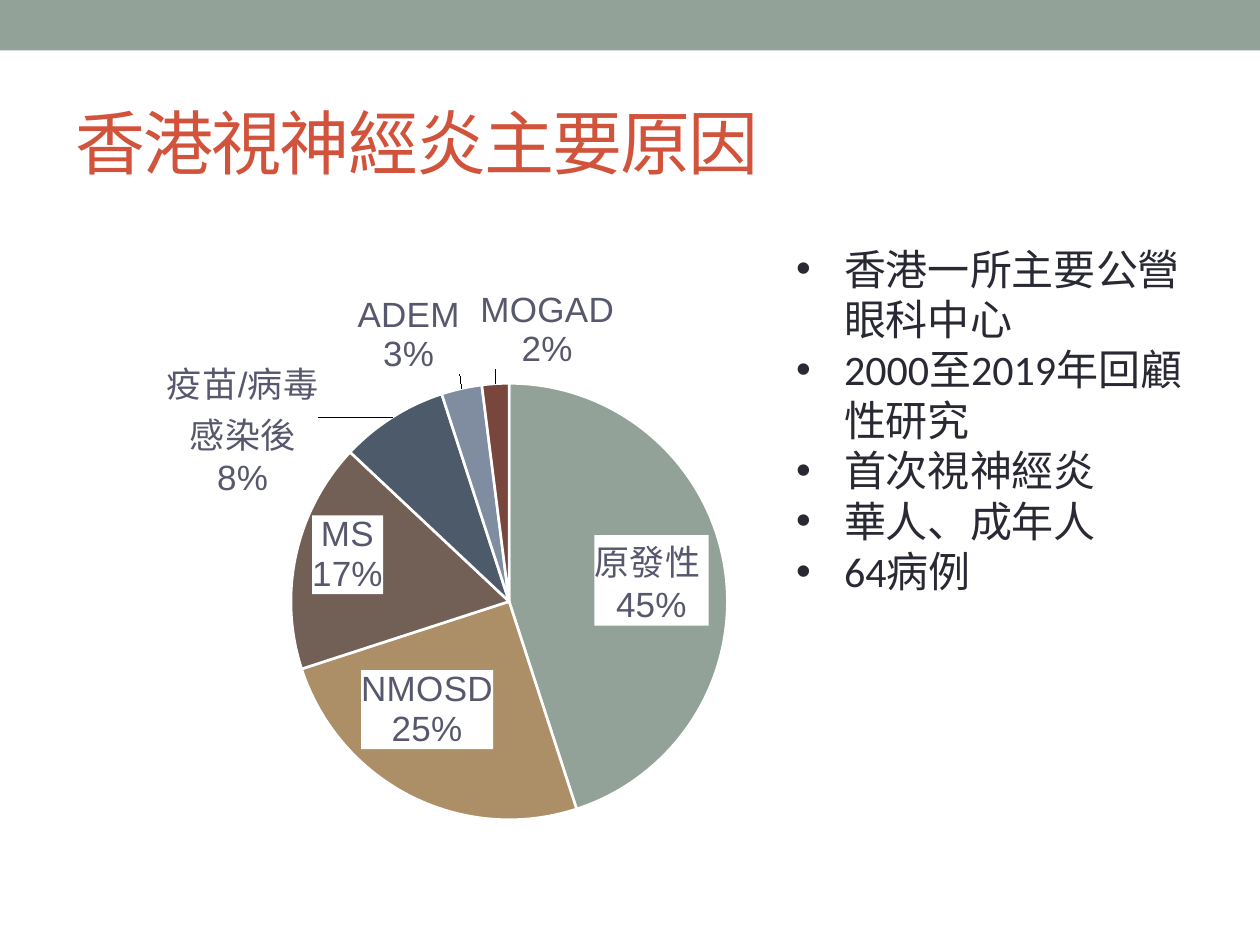
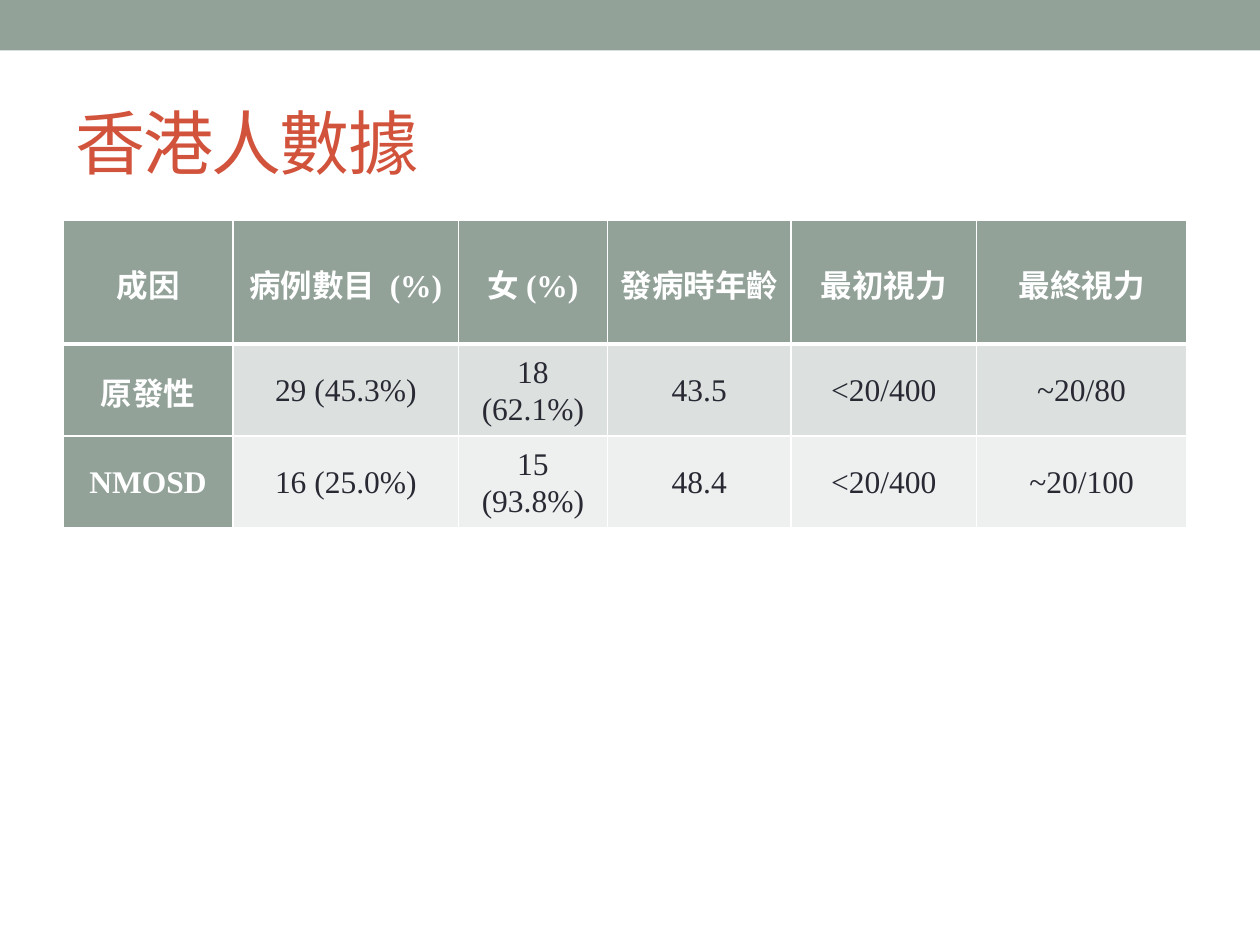
import pptx
import pptx.chart.data
import pptx.dml.color
import pptx.enum.chart
import pptx.enum.shapes
import pptx.enum.text
import pptx.oxml
import pptx.oxml.ns
import pptx.util
from lxml import etree

Inches = pptx.util.Inches
Pt = pptx.util.Pt
Align = pptx.enum.text.PP_ALIGN
Anchor = pptx.enum.text.MSO_ANCHOR
qn = pptx.oxml.ns.qn

SAGE, RUST, INK, WHITE, SLATE = "93A299", "D2533C", "292934", "FFFFFF", "57576E"


def hue(code):
    return pptx.dml.color.RGBColor.from_string(code)


def write(frame, *lines, font="Calibri", size=24, color=INK, bold=False,
          align=Align.LEFT, anchor=Anchor.TOP, track=0, bullet=None,
          left=0, indent=0, lead=None, after=0):
    """Fill a text frame with one paragraph per line; left and indent are in inches."""
    frame.word_wrap = True
    frame.vertical_anchor = anchor
    for i, line in enumerate(lines):
        par = frame.paragraphs[0] if i == 0 else frame.add_paragraph()
        par.alignment = align
        par.space_after = Pt(after)
        if lead:
            par.line_spacing = lead
        props = par._p.get_or_add_pPr()
        props.set("marL", str(Inches(left)))
        props.set("indent", str(Inches(indent)))
        if bullet:
            etree.SubElement(props, qn("a:buFont")).set("typeface", "Arial")
            etree.SubElement(props, qn("a:buChar")).set("char", bullet)
        run = par.add_run()
        run.text = line
        run.font.name = font
        run.font.size = Pt(size)
        run.font.bold = bold
        run.font.color.rgb = hue(color)
        if track:
            run._r.get_or_add_rPr().set("spc", str(track * 100))


deck = pptx.Presentation()
deck.slide_width = Inches(10)
deck.slide_height = Inches(7.5)

# Both slides: top band and title
slides = []
for title in ("香港視神經炎主要原因", "香港人數據"):
    slide = deck.slides.add_slide(deck.slide_layouts[6])
    band = slide.shapes.add_shape(pptx.enum.shapes.MSO_SHAPE.RECTANGLE,
                                  0, 0, Inches(10), Inches(0.4))
    band.shadow.inherit = False
    band.fill.solid()
    band.fill.fore_color.rgb = hue(SAGE)
    band.line.fill.background()
    head = slide.shapes.add_textbox(Inches(0.5), Inches(0.58), Inches(9), Inches(1.08))
    write(head.text_frame, title, size=40, color=RUST, anchor=Anchor.MIDDLE, track=-1)
    slides.append(slide)
cause, data = slides

# Slide 1: pie of causes. Name, share, colour, label place, label shift
parts = [
    ("原發性 ", 45, SAGE, "inEnd", (-0.01, -0.05)),
    ("NMOSD", 25, "AD8F67", "inEnd", (-0.06, -0.06)),
    ("MS", 17, "726056", "inEnd", (0.01, -0.06)),
    ("疫苗/病毒感染後", 8, "4C5A6A", "outEnd", (-0.08, 0.13)),
    ("ADEM", 3, "808DA0", "outEnd", (0, -0.01)),
    ("MOGAD", 2, "79463D", "outEnd", (0.06, -0.01)),
]
stats = pptx.chart.data.CategoryChartData()
stats.categories = [part[0] for part in parts]
stats.add_series("Series 1", [part[1] for part in parts])
chart = cause.shapes.add_chart(
    pptx.enum.chart.XL_CHART_TYPE.PIE, Inches(0.27), Inches(1.87),
    Inches(6.92), Inches(5.33), stats).chart
chart.has_legend = False
chart.has_title = False
chart.font.name = "Arial"
chart.font.size = Pt(10)
chart.font.color.rgb = hue(INK)

area = chart._chartSpace.chart.plotArea
for old in area.findall(qn("c:layout")):
    area.remove(old)
NS = pptx.oxml.ns.nsdecls("c", "a")
area.insert(0, pptx.oxml.parse_xml(
    f'<c:layout {NS}><c:manualLayout><c:layoutTarget val="inner"/>'
    '<c:xMode val="edge"/><c:yMode val="edge"/><c:x val="0.29"/><c:y val="0.22"/>'
    '<c:w val="0.51"/><c:h val="0.65"/></c:manualLayout></c:layout>'))

pie = chart.plots[0].series[0]
tags = pie.data_labels
tags.show_value = False
tags.show_percentage = True
tags.show_category_name = True
tags.font.size = Pt(20)
tags.font.name = "Arial"
tags.font.color.rgb = hue(SLATE)
for lead in tags._element.findall(qn("c:showLeaderLines")):
    lead.set("val", "1")

for i, (name, share, color, place, (right, down)) in enumerate(parts):
    slice_ = pie.points[i].format
    slice_.fill.solid()
    slice_.fill.fore_color.rgb = hue(color)
    slice_.line.color.rgb = hue(WHITE)
    slice_.line.width = Pt(1.5)
    back = "<a:noFill/>"
    if place == "inEnd":
        back = f'<a:solidFill><a:srgbClr val="{WHITE}"/></a:solidFill>'
    tags._element.insert(i, pptx.oxml.parse_xml(
        f'<c:dLbl {NS}><c:idx val="{i}"/><c:layout><c:manualLayout>'
        f'<c:x val="{right}"/><c:y val="{down}"/></c:manualLayout></c:layout>'
        f'<c:spPr>{back}</c:spPr>'
        '<c:txPr><a:bodyPr/><a:p><a:pPr><a:defRPr sz="2000">'
        f'<a:solidFill><a:srgbClr val="{SLATE}"/></a:solidFill>'
        '<a:latin typeface="Arial"/></a:defRPr></a:pPr></a:p></c:txPr>'
        f'<c:dLblPos val="{place}"/><c:showLegendKey val="0"/><c:showVal val="0"/>'
        '<c:showCatName val="1"/><c:showSerName val="0"/><c:showPercent val="1"/>'
        '<c:showBubbleSize val="0"/><c:separator>\n</c:separator></c:dLbl>'))

notes = cause.shapes.add_textbox(Inches(6.22), Inches(1.88), Inches(3.55), Inches(2.93))
write(notes.text_frame, "香港一所主要公營眼科中心", "2000至2019年回顧性研究",
      "首次視神經炎", "華人、成年人", "64病例", bullet="•", left=0.38, indent=-0.38)

# Slide 2: table of cases
rows = [
    ("成因", "病例數目  (%)", "女 (%)", "發病時年齡", "最初視力", "最終視力"),
    ("原發性", "29 (45.3%)", "18 (62.1%)", "43.5", "<20/400", "~20/80"),
    ("NMOSD", "16 (25.0%)", "15 (93.8%)", "48.4", "<20/400", "~20/100"),
]
fills = (SAGE, "DCE0DE", "EEF0EF")
table = data.shapes.add_table(3, 6, Inches(0.5), Inches(1.75),
                              Inches(8.92), Inches(2.44)).table
for col, width in zip(table.columns, (1.35, 1.79, 1.18, 1.46, 1.47, 1.67)):
    col.width = Inches(width)
for row, height in zip(table.rows, (0.98, 0.73, 0.73)):
    row.height = Inches(height)

for r, row in enumerate(rows):
    for c, text in enumerate(row):
        cell = table.cell(r, c)
        key = r == 0 or c == 0
        cell.margin_left = cell.margin_right = Inches(0.07)
        cell.margin_top = cell.margin_bottom = 0
        write(cell.text_frame, text, font="Times New Roman", size=18, bold=key,
              color=WHITE if key else INK, align=Align.CENTER,
              indent=-0.25, lead=1.07, after=6)
        cell.vertical_anchor = Anchor.MIDDLE
        for side in "LRTB":
            thick = (r, side) in ((0, "B"), (1, "T"))
            edge = etree.SubElement(cell._tc.get_or_add_tcPr(), qn("a:ln" + side))
            edge.set("w", str(Pt(3 if thick else 1)))
            paint = etree.SubElement(edge, qn("a:solidFill"))
            etree.SubElement(paint, qn("a:srgbClr")).set("val", WHITE)
        cell.fill.solid()
        cell.fill.fore_color.rgb = hue(SAGE if key else fills[r])

deck.save("out.pptx")
